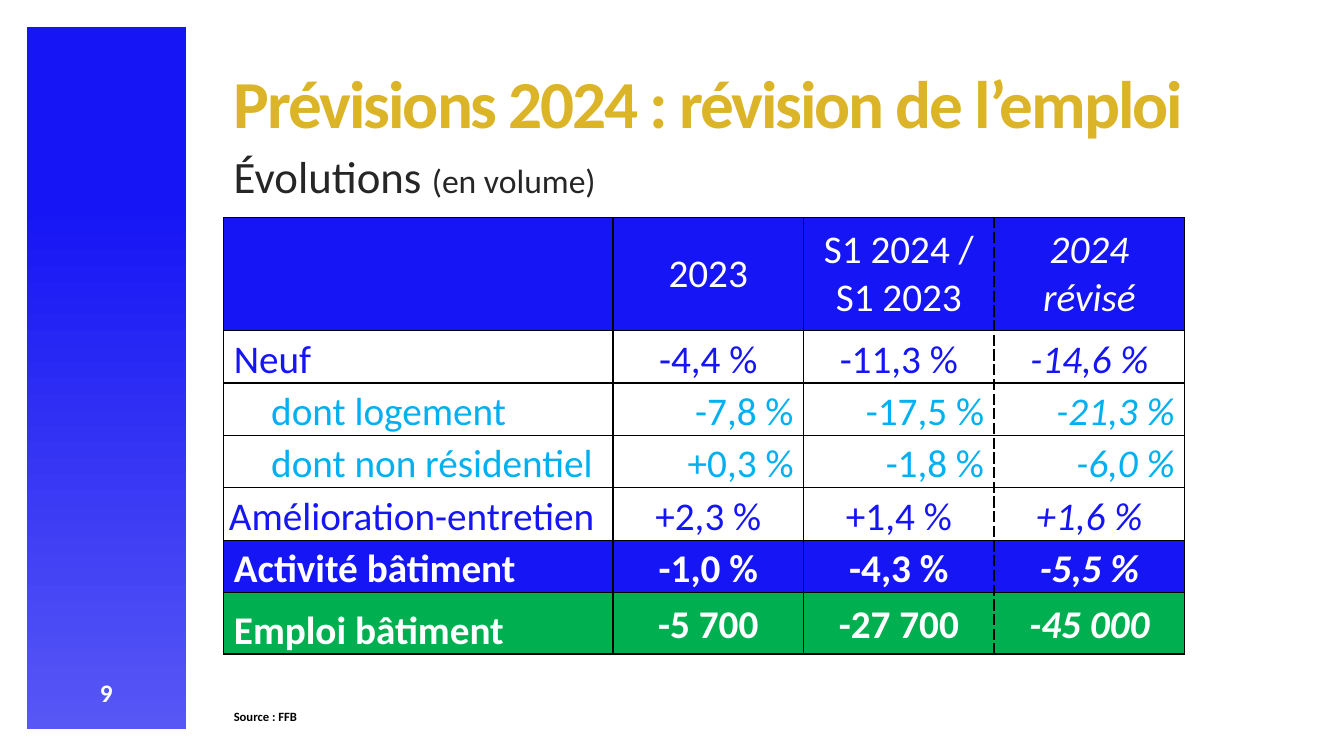
from dataclasses import dataclass

from lxml import etree
from pptx import Presentation
from pptx.dml.color import RGBColor
from pptx.enum.shapes import MSO_SHAPE
from pptx.enum.text import MSO_ANCHOR, PP_ALIGN
from pptx.oxml.ns import qn
from pptx.util import Emu, Pt

RECT = MSO_SHAPE.RECTANGLE
LEFT, MID, RIGHT = PP_ALIGN.LEFT, PP_ALIGN.CENTER, PP_ALIGN.RIGHT
CENTER, BOTTOM = MSO_ANCHOR.MIDDLE, MSO_ANCHOR.BOTTOM


@dataclass(frozen=True)
class Theme:
    font: str = "Calibri"
    blue: str = "1615F5"
    pale: str = "5757F5"
    sky: str = "00B0F0"
    green: str = "00B050"
    gold: str = "DBB428"
    dark: str = "262626"
    black: str = "000000"
    white: str = "FFFFFF"
    title: int = 48
    sub: int = 32
    cell: int = 28
    unit: int = 24
    page: int = 18
    note: int = 9


def px(num):
    """Turn px into EMU, at 100 px to the inch."""
    return Emu(num * 9144)


def write(par, text, size, color, font, bold=False, italic=False,
          align=LEFT, lead=1.0, track=0):
    """Add one run to a paragraph; track is in hundredths of a point."""
    par.alignment = align
    par.line_spacing = lead
    run = par.add_run()
    run.text = text
    face = run.font
    face.name, face.size = font, Pt(size)
    face.bold, face.italic = bold, italic
    face.color.rgb = RGBColor.from_string(color)
    if track:
        run._r.get_or_add_rPr().set("spc", str(track))


class Deck:
    def __init__(self, theme, width, height):
        self.theme = theme
        self.file = Presentation()
        self.file.slide_width, self.file.slide_height = px(width), px(height)
        self.slide = self.file.slides.add_slide(self.file.slide_layouts[6])

    def band(self, box, start, end):
        """Rectangle with a gradient running from top to bottom."""
        shape = self.slide.shapes.add_shape(RECT, *map(px, box))
        shape.shadow.inherit = False
        shape.line.fill.background()
        shape.fill.gradient()
        shape.fill.gradient_angle = 270
        stops = shape.fill.gradient_stops
        for stop, color, place in zip(stops, (start, end), (0.25, 1)):
            stop.color.rgb = RGBColor.from_string(color)
            stop.position = place

    def text(self, box, *runs, **form):
        """Text box with one paragraph of (text, size) runs."""
        frame = self.slide.shapes.add_textbox(*map(px, box)).text_frame
        frame.word_wrap = True
        for words, size in runs:
            write(frame.paragraphs[0], words, size, font=self.theme.font, **form)

    def edge(self, cell, tag, dash):
        """Draw one side of a cell."""
        props = cell._tc.get_or_add_tcPr()
        line = etree.SubElement(props, qn(f"a:{tag}"), w=str(Pt(1)))
        fill = etree.SubElement(line, qn("a:solidFill"))
        etree.SubElement(fill, qn("a:srgbClr"), val=self.theme.black)
        etree.SubElement(line, qn("a:prstDash"), val=dash)

    def cell(self, cell, text, fill, anchor, dashed, indent=0, **form):
        for tag in ("lnL", "lnR", "lnT", "lnB"):
            self.edge(cell, tag, "sysDash" if tag == dashed else "solid")
        cell.fill.solid()
        cell.fill.fore_color.rgb = RGBColor.from_string(fill)
        cell.vertical_anchor = anchor
        par = cell.text_frame.paragraphs[0]
        if indent:
            par._p.get_or_add_pPr().set("marL", str(px(indent)))
        if text:
            write(par, text, self.theme.cell, font=self.theme.font, **form)

    def table(self, box, widths, heights):
        frame = self.slide.shapes.add_table(
            len(heights), len(widths), *map(px, box))
        grid = frame.table
        grid.first_row = grid.horz_banding = False
        for col, width in zip(grid.columns, widths):
            col.width = px(width)
        for row, height in zip(grid.rows, heights):
            row.height = px(height)
        return grid


def main():
    look = Theme()
    deck = Deck(look, 1333, 750)

    # Side band and page number
    deck.band((27, 27, 158, 696), look.blue, look.pale)
    deck.text((27, 667, 157, 40), ("9", look.page),
              color=look.white, bold=True, align=MID)

    # Title, subtitle and source
    deck.text((222, 65, 1066, 83),
              ("Prévisions 2024 : révision de l’emploi", look.title),
              color=look.gold, bold=True, lead=0.9, track=-150)
    deck.text((222, 149, 1066, 50),
              ("Évolutions ", look.sub), ("(en volume)", look.unit),
              color=look.dark, lead=0.9)
    deck.text((222, 700, 898, 24), ("Source : FFB", look.note),
              color=look.black, bold=True, lead=0.9)

    # Row kinds: fill, text colour, bold, value alignment, label indent
    head = (look.blue, look.white, False, MID, 0)
    main_row = (look.white, look.blue, False, MID, 0)
    part = (look.white, look.sky, False, RIGHT, 37)
    total = (look.blue, look.white, True, MID, 0)
    jobs = (look.green, look.white, True, MID, 0)
    rows = [
        (head, "", "2023", "S1 2024 / S1 2023", "2024 révisé"),
        (main_row, "Neuf", "-4,4 %", "-11,3 %", "-14,6 %"),
        (part, "dont logement", "-7,8 %", "-17,5 %", "-21,3 %"),
        (part, "dont non résidentiel", "+0,3 %", "-1,8 %", "-6,0 %"),
        (main_row, "Amélioration-entretien", "+2,3 %", "+1,4 %", "+1,6 %"),
        (total, "Activité bâtiment", "-1,0 %", "-4,3 %", "-5,5 %"),
        (jobs, "Emploi bâtiment", "-5 700", "-27 700", "-45 000"),
    ]

    # Forecast table, with a dashed rule before the last column
    grid = deck.table((222, 216, 953, 433), [386] + [189] * 3,
                      [112] + [52] * 5 + [61])
    dashes = {2: "lnR", 3: "lnL"}
    for r, (kind, *texts) in enumerate(rows):
        fill, color, bold, align, indent = kind
        for c, text in enumerate(texts):
            label = c == 0
            full = kind is head or (kind is jobs and not label)
            deck.cell(grid.cell(r, c), text, fill,
                      CENTER if kind is head else BOTTOM, dashes.get(c),
                      indent=indent if label else 0, color=color, bold=bold,
                      italic=c == 3, align=LEFT if label else align,
                      lead=1.0 if full else 0.5)

    # The longest label needs narrow margins
    wide = grid.cell(4, 0)
    wide.margin_left = wide.margin_right = px(5)

    deck.file.save("out.pptx")


if __name__ == "__main__":
    main()
